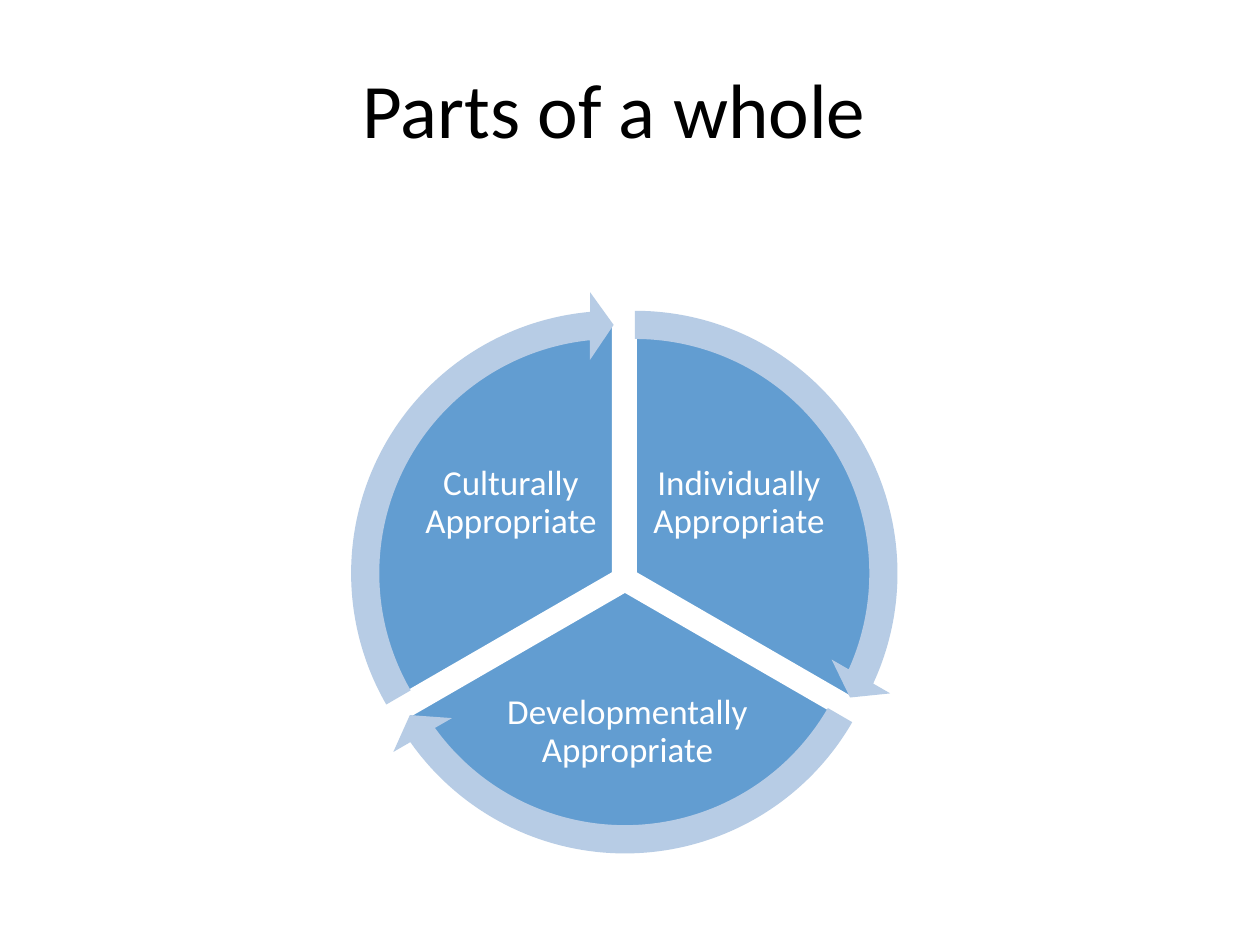
"""Builds a slide with a three-part cycle of developmentally appropriate practice."""
from dataclasses import dataclass

import pptx
import pptx.dml.color
import pptx.enum.shapes
import pptx.enum.text
import pptx.util

Inches = pptx.util.Inches
Pt = pptx.util.Pt
RGB = pptx.dml.color.RGBColor.from_string
Shapes = pptx.enum.shapes.MSO_SHAPE


@dataclass(frozen=True)
class Theme:
    font: str = "Calibri"
    title_size: int = 44
    label_size: int = 20
    title: str = "000000"
    label: str = "FFFFFF"
    wedge: str = "629DD1"
    gap: str = "FFFFFF"
    arrow: str = "B7CCE5"


theme = Theme()


def add_text(text, *, box, size, color, inset, spacing=1.0):
    frame = slide.shapes.add_textbox(*map(Inches, box)).text_frame
    frame.word_wrap = True
    frame.vertical_anchor = pptx.enum.text.MSO_ANCHOR.MIDDLE
    frame.margin_left = frame.margin_right = Inches(inset)
    frame.margin_top = frame.margin_bottom = Inches(inset)
    paragraph = frame.paragraphs[0]
    paragraph.alignment = pptx.enum.text.PP_ALIGN.CENTER
    paragraph.line_spacing = spacing
    run = paragraph.add_run()
    run.text = text
    run.font.name = theme.font
    run.font.size = Pt(size)
    run.font.color.rgb = RGB(color)


def add_round(kind, center, diameter, fill, adjustments):
    left, top = (Inches(c - diameter / 2) for c in center)
    part = slide.shapes.add_shape(kind, left, top, Inches(diameter), Inches(diameter))
    part.shadow.inherit = False
    part.fill.solid()
    part.fill.fore_color.rgb = RGB(fill)
    part.line.fill.background()
    for index, value in enumerate(adjustments):
        part.adjustments[index] = value
    return part


deck = pptx.Presentation()
deck.slide_width, deck.slide_height = Inches(10), Inches(7.5)
slide = deck.slides.add_slide(deck.slide_layouts[6])

add_text("Parts of a whole", box=(0.25, 0.17, 9.25, 1.37),
         size=theme.title_size, color=theme.title, inset=0.05)

practices = [
    ("Individually Appropriate", (5.04, 4.55), (5.15, 3.4, 1.43, 1.19), (14.73, 161.99)),
    ("Developmentally Appropriate", (4.96, 4.69), (3.91, 5.29, 2.14, 1.04), (86.72, 18)),
    ("Culturally Appropriate", (4.87, 4.55), (3.34, 3.4, 1.43, 1.19), (158.73, 90)),
]
full_turn, third, top_angle = 216, 72, 162

for index, (practice, center, label_box, _) in enumerate(practices):
    start = (top_angle + index * third) % full_turn
    wedge = add_round(Shapes.PIE, center, 3.99, theme.wedge,
                      (start, (start + third) % full_turn))
    wedge.line.color.rgb = RGB(theme.gap)
    wedge.line.width = Pt(2)
    add_text(practice, box=label_box, size=theme.label_size,
             color=theme.label, inset=0.03, spacing=0.9)

for _, center, _, (head_angle, tail_angle) in practices:
    add_round(Shapes.CIRCULAR_ARROW, center, 4.48, theme.arrow,
              (0.05, 3.28, head_angle, tail_angle, 0.06))

deck.save("out.pptx")
